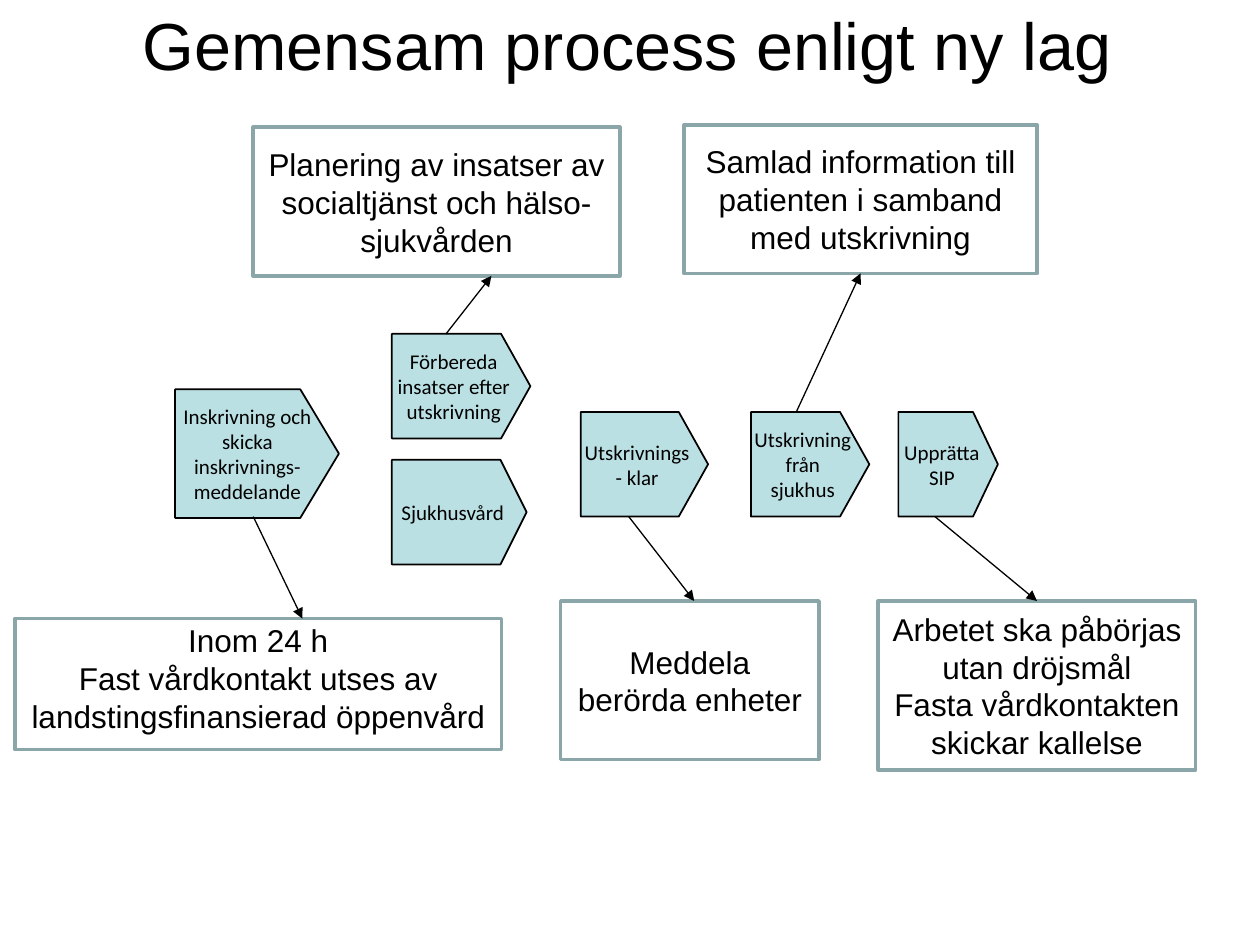
from lxml import etree
from pptx import Presentation
from pptx.dml.color import RGBColor
from pptx.enum import shapes, text
from pptx.oxml.ns import qn
from pptx.util import Inches, Pt

BLACK = RGBColor(0x00, 0x00, 0x00)
PALE_TEAL = RGBColor(0xBB, 0xE0, 0xE3)
GREY_TEAL = RGBColor(0x8A, 0xA6, 0xA8)
WHITE = RGBColor(0xFF, 0xFF, 0xFF)

STEP_HEIGHT = 0.83
STEP_ROW = 3.27
BOX_ROW = 4.77

# left, top, width, height, point depth, wording
STEPS = [
    (1.39, 3.09, 1.3, 1.02, 0.3, "Inskrivning och skicka inskrivnings-meddelande"),
    (3.11, 2.65, 1.1, STEP_HEIGHT, 0.28, "Förbereda insatser efter utskrivning"),
    (3.11, 3.65, 1.07, STEP_HEIGHT, 0.25, "Sjukhusvård"),
    (4.61, STEP_ROW, 1.01, STEP_HEIGHT, 0.28, "Utskrivnings- klar"),
    (5.96, STEP_ROW, 0.94, STEP_HEIGHT, 0.28, "Utskrivning från sjukhus"),
    (7.13, STEP_ROW, 0.79, STEP_HEIGHT, 0.25, "Upprätta SIP"),
]


def write_paragraphs(frame, lines, font_name, size):
    frame.word_wrap = True
    frame.vertical_anchor = text.MSO_ANCHOR.MIDDLE
    for index, line in enumerate(lines):
        paragraph = frame.add_paragraph() if index else frame.paragraphs[0]
        paragraph.alignment = text.PP_ALIGN.CENTER
        run = paragraph.add_run()
        run.text = line
        run.font.name = font_name
        run.font.size = Pt(size)
        run.font.color.rgb = BLACK


def add_outlined_shape(slide, kind, bounds, fill, line, line_width):
    shape = slide.shapes.add_shape(kind, *map(Inches, bounds))
    shape.shadow.inherit = False
    shape.fill.solid()
    shape.fill.fore_color.rgb = fill
    shape.line.color.rgb = line
    shape.line.width = Pt(line_width)
    return shape


def add_step(slide, bounds, point_depth, wording):
    step = add_outlined_shape(
        slide, shapes.MSO_SHAPE.PENTAGON, bounds, PALE_TEAL, BLACK, 1)
    step.adjustments[0] = point_depth
    frame = step.text_frame
    frame.margin_left = frame.margin_right = Inches(0.02)
    frame.margin_top = frame.margin_bottom = Inches(0.01)
    write_paragraphs(frame, [wording], "Calibri", 12)


def add_box(slide, bounds, *lines):
    box = add_outlined_shape(
        slide, shapes.MSO_SHAPE.RECTANGLE, bounds, WHITE, GREY_TEAL, 2)
    write_paragraphs(box.text_frame, lines, "Arial", 18)
    return box


def add_arrow(slide, start, end, target=None, side=0):
    """Draw an arrow, joined to the middle of a side of target if one is given."""
    arrow = slide.shapes.add_connector(
        shapes.MSO_CONNECTOR.STRAIGHT, *map(Inches, start + end))
    if target is not None:
        arrow.end_connect(target, side)
    arrow.line.color.rgb = BLACK
    arrow.line.width = Pt(0.75)
    etree.SubElement(arrow.line._get_or_add_ln(), qn("a:tailEnd"), type="triangle")
    etree.SubElement(arrow._element.spPr, qn("a:effectLst"))


def add_title(slide, wording):
    title = slide.shapes.title
    title.left, title.top = Inches(-0.12), Inches(0.02)
    title.width, title.height = Inches(10.2), Inches(0.66)
    write_paragraphs(title.text_frame, [wording], "Arial", 38)


def main():
    presentation = Presentation()
    presentation.slide_width = Inches(10)
    presentation.slide_height = Inches(7.5)
    slide = presentation.slides.add_slide(presentation.slide_layouts[5])
    add_title(slide, "Gemensam process enligt ny lag")

    for *bounds, point_depth, wording in STEPS:
        add_step(slide, bounds, point_depth, wording)

    contact = add_box(slide, (0.12, 4.91, 3.86, 1.04), "Inom 24 h",
                      "Fast vårdkontakt utses av landstingsfinansierad öppenvård")
    contact.text_frame.margin_bottom = Inches(0.15)
    add_box(slide, (4.45, BOX_ROW, 2.05, 1.26), "Meddela berörda enheter")
    summons = add_box(slide, (6.97, BOX_ROW, 2.52, 1.34),
                      "Arbetet ska påbörjas utan dröjsmål",
                      "Fasta vårdkontakten skickar kallelse")
    add_box(slide, (2.01, 1.01, 2.91, 1.18),
            "Planering av insatser av socialtjänst och hälso-sjukvården")
    information = add_box(slide, (5.43, 0.99, 2.8, 1.18),
                          "Samlad information till patienten i samband med utskrivning")

    add_arrow(slide, (2.01, 4.1), (2.4, 4.91))
    add_arrow(slide, (4.99, 4.1), (5.51, BOX_ROW))
    add_arrow(slide, (7.42, 4.1), (8.23, BOX_ROW), summons, 0)
    add_arrow(slide, (3.54, 2.65), (3.9, 2.19))
    add_arrow(slide, (6.32, STEP_ROW), (6.83, 2.17), information, 2)

    presentation.save("out.pptx")


if __name__ == "__main__":
    main()
